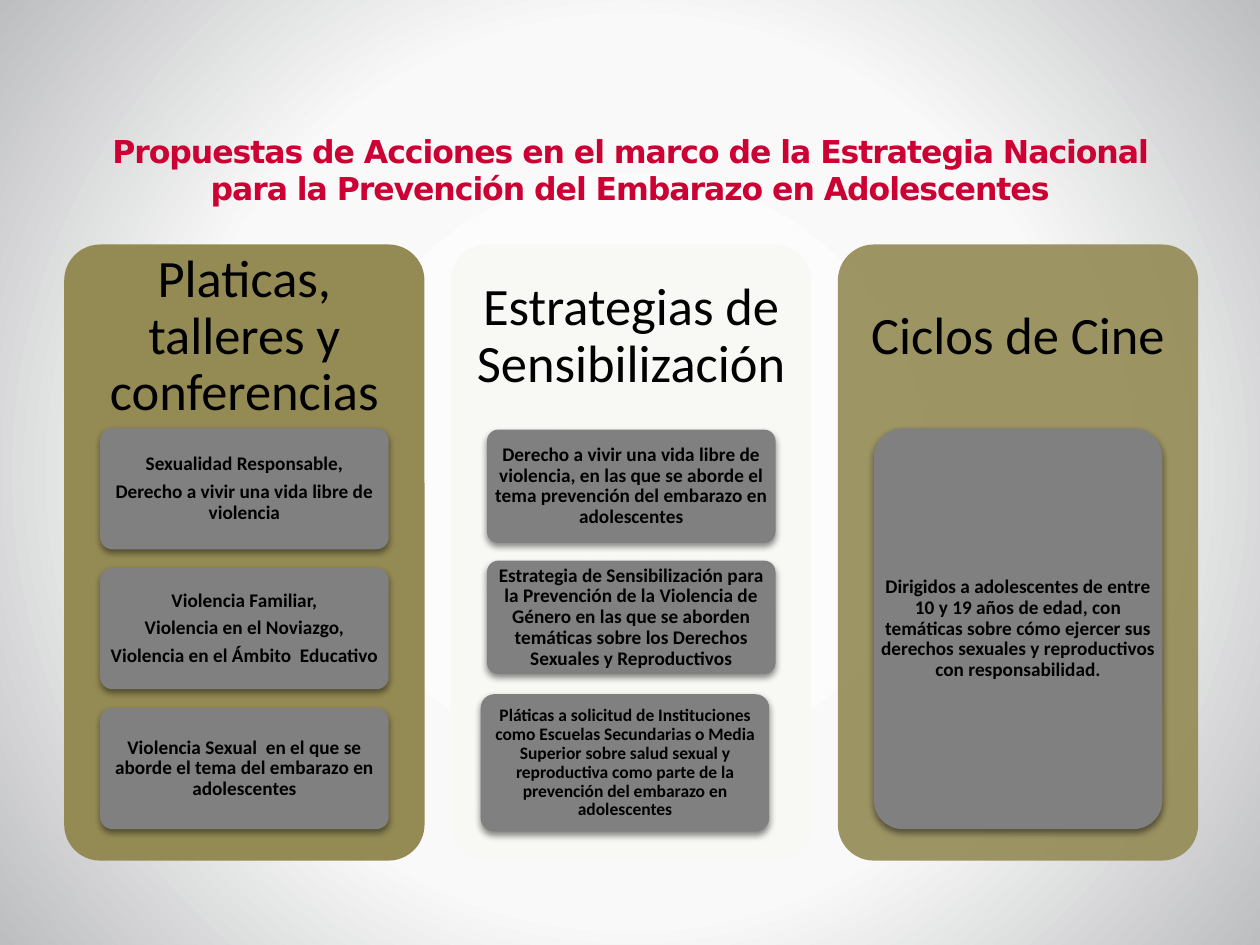
import pptx
import pptx.util
import pptx.dml.color
import pptx.enum.shapes
import pptx.enum.text
import pptx.oxml
import pptx.oxml.ns
from lxml import etree

Inches, Pt = pptx.util.Inches, pptx.util.Pt
qn = pptx.oxml.ns.qn
NS = pptx.oxml.ns.nsdecls("a")

THEME = {
    "title": "CC0033", "edge": "D2D0C7", "text": "000000",
    "olive": "948A54", "pale": "F8F8F4", "card": "808080",
    "back": [(0, "FFFFFF"), (57, "F9F9F9"), (100, "BDBEC0")],
    "font": "Calibri", "title_font": "DejaVu Sans",
    "title_size": 18, "head_size": 30, "card_size": 11, "small_size": 10,
}

TITLE = ("Propuestas de Acciones en el marco de la Estrategia Nacional "
         "para la Prevención del Embarazo en Adolescentes")

# Each card: shift from the column's card edge, top, height, size, paragraphs
COLUMNS = [
    {"head": "Platicas, talleres y conferencias", "fill": "olive", "alpha": 100, "cards": [
        (0, 3.4, 0.96, "card_size", ["Sexualidad Responsable,",
                                     "Derecho a vivir una vida libre de violencia"]),
        (0, 4.51, 0.96, "card_size", ["Violencia Familiar,", "Violencia en el Noviazgo,",
                                      "Violencia en el Ámbito  Educativo"]),
        (0, 5.62, 0.96, "card_size", ["Violencia Sexual  en el que se aborde el tema "
                                      "del embarazo en adolescentes"]),
    ]},
    {"head": "Estrategias de Sensibilización", "fill": "pale", "alpha": 100, "cards": [
        (0, 3.41, 0.9, "card_size", ["Derecho a vivir una vida libre de violencia, en las que se "
                                     "aborde el tema prevención del embarazo en adolescentes"]),
        (0, 4.45, 0.9, "card_size", ["Estrategia de Sensibilización para la Prevención de la "
                                     "Violencia de Género en las que se aborden temáticas sobre "
                                     "los Derechos Sexuales y Reproductivos"]),
        (-0.05, 5.51, 1.09, "small_size", ["Pláticas a solicitud de Instituciones como Escuelas "
                                           "Secundarias o Media Superior sobre salud sexual y "
                                           "reproductiva como parte de la prevención del "
                                           "embarazo en adolescentes"]),
    ]},
    {"head": "Ciclos de Cine", "fill": "olive", "alpha": 90, "cards": [
        (0, 3.4, 3.18, "card_size", ["Dirigidos a adolescentes de entre 10 y 19 años de edad, "
                                     "con temáticas sobre cómo ejercer sus derechos sexuales y "
                                     "reproductivos con responsabilidad."]),
    ]},
]

LEFT, TOP, PITCH = 0.51, 1.94, 3.07
COL_W, COL_H, HEAD_H = 2.86, 4.89, 1.47
CARD_W = 2.29
INDENT = (COL_W - CARD_W) / 2


def color(key):
    return pptx.dml.color.RGBColor.from_string(THEME[key])


def paint_back(slide):
    """Fill the background with a gradient that spreads from the centre."""
    slide.background.fill.solid()
    stops = "".join(f'<a:gs pos="{pos * 1000}"><a:srgbClr val="{rgb}"/></a:gs>'
                    for pos, rgb in THEME["back"])
    grad = pptx.oxml.parse_xml(
        f'<a:gradFill {NS} rotWithShape="1"><a:gsLst>{stops}</a:gsLst><a:path path="circle">'
        '<a:fillToRect l="50000" t="50000" r="50000" b="50000"/></a:path></a:gradFill>')
    props = slide.element.find(".//" + qn("p:bgPr"))
    props.replace(props.find(qn("a:solidFill")), grad)


def style(run, font, size, key, bold):
    run.font.name, run.font.size, run.font.bold = font, Pt(THEME[size]), bold
    run.font.color.rgb = color(key)


def add_panel(slide, box, key, alpha=100, shade=False):
    panel = slide.shapes.add_shape(
        pptx.enum.shapes.MSO_SHAPE.ROUNDED_RECTANGLE, *map(Inches, box))
    panel.adjustments[0] = 0.1
    panel.fill.solid()
    panel.fill.fore_color.rgb = color(key)
    panel.line.fill.background()
    panel.shadow.inherit = False
    props = panel.element.spPr
    if alpha < 100:
        rgb = props.find(qn("a:solidFill") + "/" + qn("a:srgbClr"))
        etree.SubElement(rgb, qn("a:alpha"), val=str(alpha * 1000))
    if shade:
        props.find(qn("a:effectLst")).append(pptx.oxml.parse_xml(
            f'<a:outerShdw {NS} blurRad="{Pt(4)}" dist="{Pt(2)}" dir="5400000" rotWithShape="0">'
            '<a:srgbClr val="000000"><a:alpha val="45000"/></a:srgbClr></a:outerShdw>'))


def add_text(slide, box, lines, size, inset, bold):
    frame = slide.shapes.add_textbox(*map(Inches, box)).text_frame
    frame.word_wrap = True
    frame.vertical_anchor = pptx.enum.text.MSO_ANCHOR.MIDDLE
    frame.margin_left = frame.margin_right = Inches(inset[0])
    frame.margin_top = frame.margin_bottom = Inches(inset[1])
    for i, line in enumerate(lines):
        para = frame.add_paragraph() if i else frame.paragraphs[0]
        para.alignment = pptx.enum.text.PP_ALIGN.CENTER
        para.line_spacing = 0.9
        after = etree.SubElement(para._p.get_or_add_pPr(), qn("a:spcAft"))
        etree.SubElement(after, qn("a:spcPct"), val="35000")
        run = para.add_run()
        run.text = line
        style(run, THEME["font"], size, "text", bold)


def add_title(slide):
    title = slide.shapes.title
    title.left, title.top, title.width, title.height = map(Inches, (0.5, 0.99, 9, 0.71))
    frame = title.text_frame
    frame.word_wrap = True
    frame.auto_size = pptx.enum.text.MSO_AUTO_SIZE.NONE
    frame.vertical_anchor = pptx.enum.text.MSO_ANCHOR.MIDDLE
    para = frame.paragraphs[0]
    para.alignment = pptx.enum.text.PP_ALIGN.CENTER
    run = para.add_run()
    run.text = TITLE
    style(run, THEME["title_font"], "title_size", "title", True)
    props = run._r.get_or_add_rPr()
    props.set("spc", "-60")
    props.insert(0, pptx.oxml.parse_xml(
        f'<a:ln {NS} w="{Pt(0.25)}"><a:solidFill><a:srgbClr val="{THEME["edge"]}">'
        '<a:alpha val="25000"/></a:srgbClr></a:solidFill><a:prstDash val="solid"/></a:ln>'))


def main():
    deck = pptx.Presentation()
    deck.slide_width, deck.slide_height = Inches(10), Inches(7.5)
    slide = deck.slides.add_slide(deck.slide_layouts[5])
    paint_back(slide)
    add_title(slide)
    for i, col in enumerate(COLUMNS):
        x = LEFT + i * PITCH
        add_panel(slide, (x, TOP, COL_W, COL_H), col["fill"], col["alpha"])
        add_text(slide, (x, TOP, COL_W, HEAD_H), [col["head"]],
                 "head_size", (0.12, 0.12), False)
        for shift, top, high, size, lines in col["cards"]:
            box = (x + INDENT + shift, top, CARD_W, high)
            add_panel(slide, box, "card", shade=True)
            add_text(slide, box, lines, size, (0.03, 0.02), True)
    deck.save("out.pptx")


if __name__ == "__main__":
    main()
